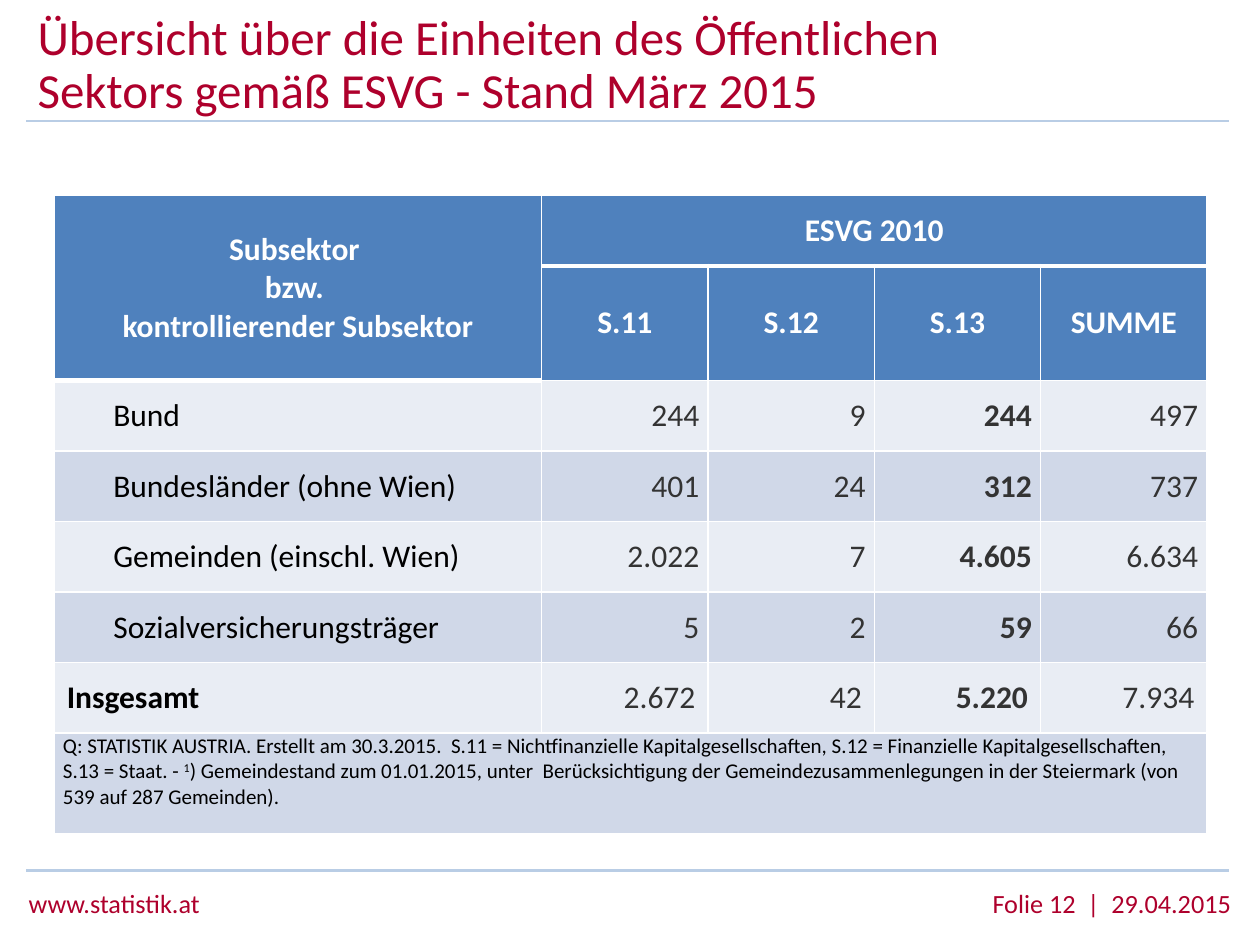
from lxml import etree
from pptx import Presentation
from pptx.dml.color import RGBColor
from pptx.enum.shapes import MSO_CONNECTOR
from pptx.enum.text import MSO_ANCHOR, PP_ALIGN
from pptx.oxml.ns import qn
from pptx.util import Inches, Pt

LEFT, CENTER, RIGHT = PP_ALIGN.LEFT, PP_ALIGN.CENTER, PP_ALIGN.RIGHT
TOP, MIDDLE = MSO_ANCHOR.TOP, MSO_ANCHOR.MIDDLE
STRAIGHT = MSO_CONNECTOR.STRAIGHT

RED = RGBColor(0xAE, 0x00, 0x2C)
RULE_BLUE = RGBColor(0xB9, 0xCD, 0xE5)
HEADER_BLUE = RGBColor(0x4F, 0x81, 0xBD)
LIGHT_BAND = RGBColor(0xE9, 0xED, 0xF4)
DARK_BAND = RGBColor(0xD0, 0xD8, 0xE8)
WHITE = RGBColor(0xFF, 0xFF, 0xFF)
BLACK = RGBColor(0x00, 0x00, 0x00)
GREY = RGBColor(0x33, 0x33, 0x33)

FONT = "Calibri"
COLUMN_WIDTHS = [3.87] + [1.32] * 4
ROW_HEIGHTS = [0.56, 0.91] + [0.56] * 5 + [0.8]
SECTORS = ["S.11", "S.12", "S.13", "SUMME"]
BOLD_COLUMN = 1 + SECTORS.index("S.13")
BODY = [
    ["Bund", "244", "9", "244", "497"],
    ["Bundesländer (ohne Wien)", "401", "24", "312", "737"],
    ["Gemeinden (einschl. Wien)", "2.022", "7", "4.605", "6.634"],
    ["Sozialversicherungsträger", "5", "2", "59", "66"],
    ["Insgesamt", "2.672", "42", "5.220", "7.934"],
]
SOURCE_NOTE = [
    "Q: STATISTIK AUSTRIA. Erstellt am 30.3.2015.  S.11 = Nichtfinanzielle "
    "Kapitalgesellschaften, S.12 = Finanzielle Kapitalgesellschaften, S.13 = Staat. - ",
    "1",
    ") Gemeindestand zum 01.01.2015, unter  Berücksichtigung der "
    "Gemeindezusammenlegungen in der Steiermark (von 539 auf 287 Gemeinden).",
]


def format_runs(paragraph, size, color, bold=False):
    """Give every run of the paragraph the same character format."""
    values = {"name": FONT, "size": Pt(size), "bold": bold}
    for run in paragraph.runs:
        for name, value in values.items():
            setattr(run.font, name, value)
        run.font.color.rgb = color


def add_text(slide, text, box, size, align=LEFT, anchor=TOP, line_spacing=None):
    shape = slide.shapes.add_textbox(*(Inches(value) for value in box))
    frame = shape.text_frame
    frame.word_wrap = True
    frame.vertical_anchor = anchor
    paragraph = frame.paragraphs[0]
    paragraph.text = text
    paragraph.alignment = align
    paragraph.line_spacing = line_spacing
    format_runs(paragraph, size, RED)


def add_rule(slide, y):
    line = slide.shapes.add_connector(
        STRAIGHT, Inches(0.21), Inches(y), Inches(9.75), Inches(y))
    line.line.color.rgb = RULE_BLUE
    line.line.width = Pt(1.5)
    etree.SubElement(line._element.spPr, qn("a:effectLst"))


def set_borders(cell, bottom=1):
    """White borders; the line elements stand before the cell's fill."""
    properties = cell._tc.get_or_add_tcPr()
    widths = {"a:lnL": 1, "a:lnR": 1, "a:lnT": 1, "a:lnB": bottom}
    for position, (tag, width) in enumerate(widths.items()):
        border = etree.Element(qn(tag), w=str(Pt(width)))
        fill = etree.SubElement(border, qn("a:solidFill"))
        etree.SubElement(fill, qn("a:srgbClr"), val=str(WHITE))
        properties.insert(position, border)


def style_cell(cell, fill, bottom=1, inset=True):
    cell.fill.solid()
    cell.fill.fore_color.rgb = fill
    cell.vertical_anchor = MIDDLE
    if inset:
        margins = {"left": 0.07, "right": 0.07, "top": 0, "bottom": 0}
        for side, margin in margins.items():
            setattr(cell, f"margin_{side}", Inches(margin))
    set_borders(cell, bottom)


def write_cell(cell, text, color, align=LEFT, bold=False, indent=0):
    paragraph = cell.text_frame.paragraphs[0]
    paragraph.text = text
    paragraph.alignment = align
    if indent:
        paragraph._p.get_or_add_pPr().set("marL", str(Inches(indent)))
    format_runs(paragraph, 18, color, bold)


def fill_header(table):
    for row in range(2):
        for column in range(len(COLUMN_WIDTHS)):
            thick = row == 0 or column == 0
            style_cell(table.cell(row, column), HEADER_BLUE, 3 if thick else 1)
    table.cell(0, 0).merge(table.cell(1, 0))
    table.cell(0, 1).merge(table.cell(0, len(SECTORS)))
    headings = {(0, 0): "Subsektor \vbzw. \vkontrollierender Subsektor",
                (0, 1): "ESVG 2010"}
    headings.update({(1, i): name for i, name in enumerate(SECTORS, 1)})
    for position, text in headings.items():
        write_cell(table.cell(*position), text, WHITE, CENTER, bold=True)


def fill_body(table):
    for row, values in enumerate(BODY, 2):
        total = values is BODY[-1]
        for column, text in enumerate(values):
            cell = table.cell(row, column)
            style_cell(cell, DARK_BAND if row % 2 else LIGHT_BAND, inset=not total)
            if column == 0:
                write_cell(cell, text, BLACK, bold=total, indent=0 if total else 0.4)
            else:
                write_cell(cell, text, GREY, RIGHT, bold=column == BOLD_COLUMN)


def fill_source_note(table):
    last = len(ROW_HEIGHTS) - 1
    for column in range(len(COLUMN_WIDTHS)):
        style_cell(table.cell(last, column), DARK_BAND)
    note = table.cell(last, 0)
    note.merge(table.cell(last, len(SECTORS)))
    note.vertical_anchor = TOP
    paragraph = note.text_frame.paragraphs[0]
    for text in SOURCE_NOTE:
        paragraph.add_run().text = text
    format_runs(paragraph, 12, BLACK)
    paragraph.runs[1].font._element.set("baseline", "30000")


def add_unit_table(slide):
    frame = slide.shapes.add_table(
        len(ROW_HEIGHTS), len(COLUMN_WIDTHS), Inches(0.43), Inches(1.55),
        Inches(sum(COLUMN_WIDTHS)), Inches(sum(ROW_HEIGHTS)))
    table = frame.table
    for column, width in zip(table.columns, COLUMN_WIDTHS):
        column.width = Inches(width)
    for row, height in zip(table.rows, ROW_HEIGHTS):
        row.height = Inches(height)
    fill_header(table)
    fill_body(table)
    fill_source_note(table)


def main():
    presentation = Presentation()
    presentation.slide_width = Inches(10)
    presentation.slide_height = Inches(7.5)
    slide = presentation.slides.add_slide(presentation.slide_layouts[6])

    # Footer and rules
    add_text(slide, "www.statistik.at", (0.13, 6.99, 2.27, 0.35), 15)
    add_text(slide, "Folie 12  |  29.04.2015", (6.25, 6.99, 3.62, 0.35), 15, RIGHT)
    for y in (0.96, 6.91):
        add_rule(slide, y)

    # Title
    add_text(slide, "Übersicht über die Einheiten des Öffentlichen Sektors "
             "gemäß ESVG - Stand März 2015", (0.2, 0.05, 7.63, 0.94), 28,
             anchor=MIDDLE, line_spacing=Pt(30))

    # Table of units by subsector
    add_unit_table(slide)
    presentation.save("out.pptx")


if __name__ == "__main__":
    main()
